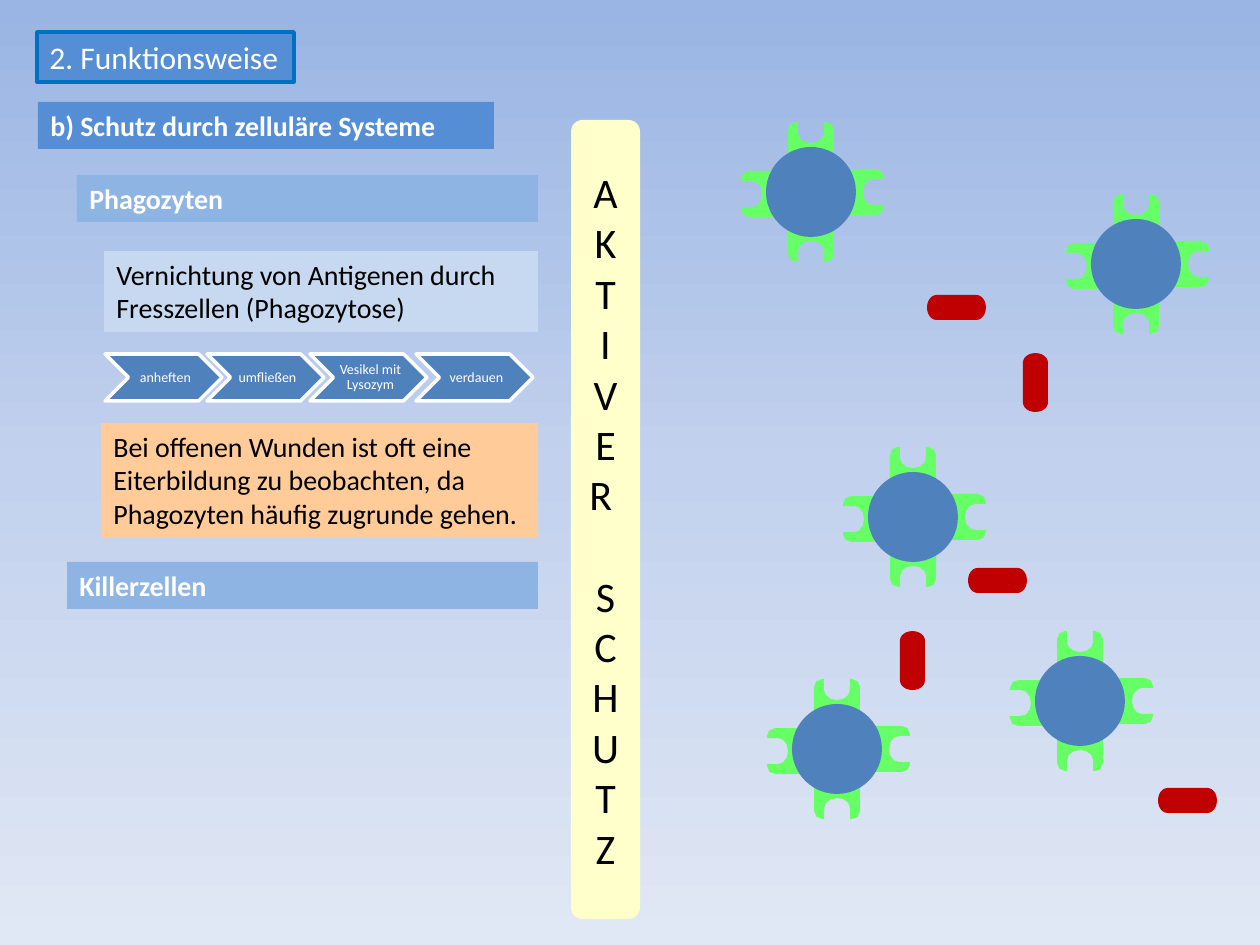
"""Build the slide on phagocytes and active immune protection."""
from copy import deepcopy
from math import cos, pi, sin

from pptx import Presentation
from pptx import util as u
from pptx.dml.color import RGBColor
from pptx.enum import shapes, text
from pptx.oxml.ns import qn

SCALE = 914400 / 126
FINE = 10
SHAPE = shapes.MSO_SHAPE
MIDDLE = text.MSO_ANCHOR.MIDDLE
CENTER = text.PP_ALIGN.CENTER
FIT = text.MSO_AUTO_SIZE.SHAPE_TO_FIT_TEXT

BLUE, GREEN, RED, WHITE = "4F81BD", "66FF66", "C00000", "FFFFFF"
SKY = ((0, "9AB5E4"), (0.5, "C2D1ED"), (1, "E1E8F5"))
STEPS = ((105, "anheften"), (207, "umfließen"),
         (310, "Vesikel mit Lysozym"), (416, "verdauen"))
CELLS = ((913, 517), (1136, 264), (1080, 701), (811, 192), (837, 749))
ARMS = ((0, 38, 0), (90, 0, 35), (270, 0, -35), (180, -35, 2))
PILLS = ((1006, 370, 270), (968, 568, 0), (883, 648, 270),
         (927, 295, 0), (1158, 788, 0))


def px(*lengths):
    """Turn px lengths into a list of EMU."""
    return [u.Emu(round(length * SCALE)) for length in lengths]


def color(value):
    """Turn a hex string into a colour."""
    return RGBColor.from_string(value)


def paint(shape, fill, line=None):
    """Give a shape its fill and, if asked for, a 2 pt line."""
    shape.shadow.inherit = False
    shape.fill.solid()
    shape.fill.fore_color.rgb = color(fill)
    if line:
        shape.line.color.rgb = color(line)
        shape.line.width = u.Pt(2)
    else:
        shape.line.fill.background()


def add_block(parent, kind, at, fill, line=None, turn=0):
    """Add a painted preset shape."""
    shape = parent.shapes.add_shape(kind, *px(*at))
    shape.rotation = turn
    paint(shape, fill, line)
    return shape


def write(shape, *lines, size=16, ink="000000", bold=False, align=text.PP_ALIGN.LEFT,
          anchor=text.MSO_ANCHOR.TOP, wrap=True, fit=text.MSO_AUTO_SIZE.NONE,
          spacing=None, gap=0):
    """Write one paragraph per line, with a gap in points between them."""
    frame = shape.text_frame
    frame.word_wrap = wrap
    frame.auto_size = fit
    frame.vertical_anchor = anchor
    for index, line in enumerate(lines):
        para = frame.add_paragraph() if index else frame.paragraphs[0]
        para.alignment = align
        if spacing:
            para.line_spacing = spacing
        if index and gap:
            para.space_before = u.Pt(gap)
        span = para.add_run()
        span.text = line
        span.font.name = "Calibri"
        span.font.size = u.Pt(size)
        span.font.bold = bold
        span.font.color.rgb = color(ink)


def add_label(page, at, fill, *lines, line=None, **style):
    """Add a filled rectangle that holds text."""
    write(add_block(page, SHAPE.RECTANGLE, at, fill, line), *lines, fit=FIT, **style)


def add_step(page, left, words):
    """Add a chevron of the process with its text box."""
    group = page.shapes.add_group_shape()
    add_block(group, SHAPE.CHEVRON, (left, 354, 117, 47), BLUE, WHITE)
    box = group.shapes.add_textbox(*px(left + 23, 354, 71, 47))
    frame = box.text_frame
    frame.margin_left = px(5)[0]
    frame.margin_right = frame.margin_top = frame.margin_bottom = px(1)[0]
    write(box, words, size=8, ink=WHITE, align=CENTER, anchor=MIDDLE, spacing=0.9)


def arc(x, y, wide, high, start, end, count=2):
    """List points along an elliptic arc, with angles in quarter turns."""
    angles = [(start + (end - start) * i / count) * pi / 2 for i in range(count + 1)]
    return [(x + wide * cos(a), y + high * sin(a)) for a in angles]


def arm_outline():
    """List the points of a receptor arm with a notch on its right."""
    return (arc(8, 8, 8, 8, 2, 3) + arc(62, 8, 8, 8, 3, 4) + [(70, 10)]
            + arc(59, 23, 10, 13, 3, 1, 6) + [(70, 36)]
            + arc(62, 38, 8, 8, 0, 1) + arc(8, 38, 8, 8, 1, 2))


def add_cell(page, x, y):
    """Add a phagocyte with four receptor arms around its centre."""
    group = page.shapes.add_group_shape()
    outline = [(a * FINE, b * FINE) for a, b in arm_outline()]
    for turn, across, down in ARMS:
        builder = group.shapes.build_freeform(*outline[0], scale=SCALE / FINE)
        builder.add_line_segments(outline[1:], close=True)
        arm = builder.convert_to_shape(*px(x + across - 35, y + down - 23))
        arm.rotation = turn
        paint(arm, GREEN)
    add_block(group, SHAPE.OVAL, (x - 45, y - 45, 90, 90), BLUE)


def set_sky(page):
    """Fill the background with a vertical gradient."""
    fill = page.background.fill
    fill.gradient()
    fill.gradient_angle = 270
    stops = page.element.find(".//" + qn("a:gsLst"))
    stops.append(deepcopy(stops[0]))
    for stop, (position, value) in zip(fill.gradient_stops, SKY):
        stop.position = position
        stop.color.rgb = color(value)


def main():
    """Build and save the slide."""
    deck = Presentation()
    deck.slide_width, deck.slide_height = px(1260, 945)
    page = deck.slides.add_slide(deck.slide_layouts[6])
    set_sky(page)

    heading = {"ink": WHITE, "bold": True}
    add_label(page, (37, 32, 257, 50), "558ED5", "2. Funktionsweise",
              line="0070C0", size=18, ink=WHITE, wrap=False)
    add_label(page, (38, 102, 456, 47), "558ED5",
              "b) Schutz durch zelluläre Systeme", **heading)
    add_label(page, (77, 175, 461, 47), "8EB4E3", "Phagozyten", **heading)
    add_label(page, (104, 251, 434, 81), "C6D9F1",
              "Vernichtung von Antigenen durch Fresszellen (Phagozytose)")
    column = add_block(page, SHAPE.ROUNDED_RECTANGLE, (571, 120, 69, 799), "FFFFCC")
    write(column, "AKT I VER ", "SCHUTZ", size=24, align=CENTER, anchor=MIDDLE, gap=29)
    for left, words in STEPS:
        add_step(page, left, words)
    add_label(page, (101, 423, 437, 115), "FFCC99", "Bei offenen Wunden ist oft eine",
              "Eiterbildung zu beobachten, da", "Phagozyten häufig zugrunde gehen.")
    add_label(page, (67, 562, 471, 47), "8EB4E3", "Killerzellen", **heading)

    for x, y in CELLS:
        add_cell(page, x, y)
    for left, top, turn in PILLS:
        add_block(page, SHAPE.FLOWCHART_TERMINATOR, (left, top, 59, 25), RED, turn=turn)
    deck.save("out.pptx")


if __name__ == "__main__":
    main()
